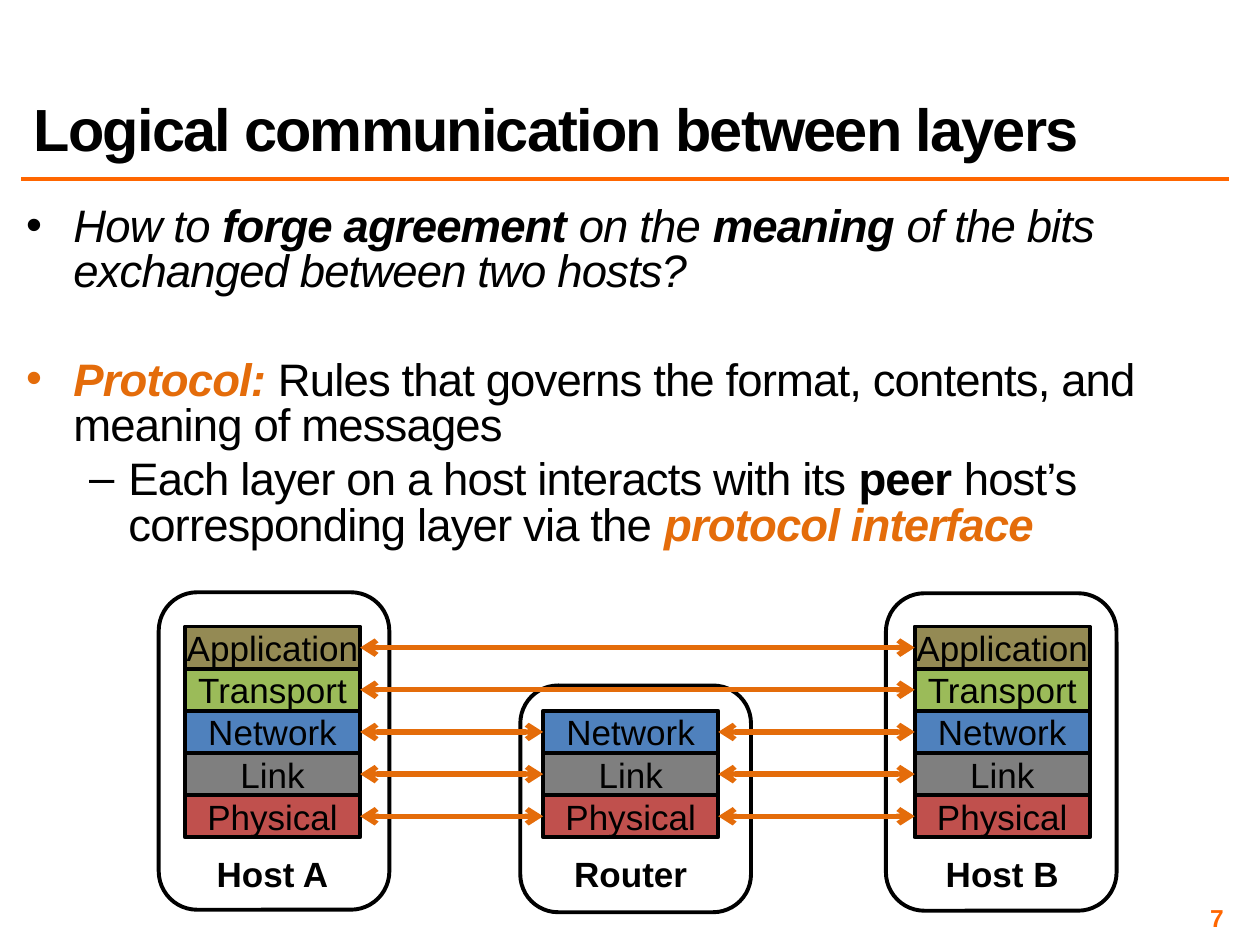
from dataclasses import dataclass

from lxml.etree import SubElement
from pptx import Presentation
from pptx.dml.color import RGBColor
from pptx.enum.shapes import MSO_CONNECTOR as Connector, MSO_SHAPE as Shape
from pptx.enum.text import MSO_ANCHOR as Anchor, PP_ALIGN as Align
from pptx.oxml.ns import qn
from pptx.util import Cm, Pt

COLORS = {
    "black": "000000",
    "rule": "FF6600",
    "accent": "E46C0A",
    "Application": "948A54",
    "Transport": "9BBB59",
    "Network": "4F81BD",
    "Link": "7F7F7F",
    "Physical": "C0504D",
}
LAYERS = ["Application", "Transport", "Network", "Link", "Physical"]
LAYER_TOP, LAYER_WIDTH, LAYER_HEIGHT = 12.63, 3.53, 0.85
FRAME_WIDTH = 4.65
LABEL_TOP, LABEL_WIDTH, LABEL_HEIGHT = 17.07, 2.8, 1.12
LEFT_SIDE, RIGHT_SIDE = 1, 3


@dataclass
class Span:
    text: str
    bold: bool = False
    italic: bool = False
    color: str = "black"


@dataclass
class Bullet:
    mark: str
    margin: float
    hanging: float
    space_before: float
    spans: list[Span]


@dataclass
class Node:
    name: str
    layers: list[str]
    left: float
    frame_left: float
    frame_top: float
    frame_height: float


BULLETS = [
    Bullet("•", 0.95, 0.95, 5.2, [
        Span("How to ", italic=True),
        Span("forge agreement ", bold=True, italic=True),
        Span("on the ", italic=True),
        Span("meaning", bold=True, italic=True),
        Span(" of the bits exchanged between two hosts?", italic=True),
    ]),
    Bullet("•", 0.95, 0.95, 36, [
        Span("Protocol: ", bold=True, italic=True, color="accent"),
        Span("Rules that governs the format, contents, and meaning of messages"),
    ]),
    Bullet("–", 2.06, 0.79, 5.2, [
        Span("Each layer on a host interacts with its "),
        Span("peer", bold=True),
        Span(" host’s corresponding layer via the "),
        Span("protocol interface", bold=True, italic=True, color="accent"),
    ]),
]
HOST_A = Node("Host A", LAYERS, 3.73, 3.2, 11.94, 6.4)
ROUTER = Node("Router", LAYERS[2:], 10.95, 10.49, 13.82, 4.57)
HOST_B = Node("Host B", LAYERS, 18.44, 17.86, 11.96, 6.4)
NODES = [HOST_A, ROUTER, HOST_B]


def rgb(name: str) -> RGBColor:
    return RGBColor.from_string(COLORS[name])


def write(para, spans: list[Span], *, size: float, align=Align.LEFT,
          tracking: float = 0, line_spacing: float = 1) -> None:
    """Fill a paragraph with spans; tracking is letter spacing in points."""
    para.alignment = align
    para.line_spacing = line_spacing
    for span in spans:
        run = para.add_run()
        run.text = span.text
        font = run.font
        font.name, font.size = "Arial", Pt(size)
        font.bold, font.italic = span.bold, span.italic
        font.color.rgb = rgb(span.color)
        if tracking:
            run._r.get_or_add_rPr().set("spc", str(round(tracking * 100)))


def add_text_box(slide, left: float, top: float, width: float, height: float,
                 *, anchor=Anchor.TOP, wrap: bool = True, inset: float | None = None):
    box = slide.shapes.add_textbox(Cm(left), Cm(top), Cm(width), Cm(height))
    frame = box.text_frame
    frame.word_wrap, frame.vertical_anchor = wrap, anchor
    if inset is not None:
        frame.margin_left = frame.margin_right = Cm(inset)
        frame.margin_top = frame.margin_bottom = Cm(inset)
    return frame


def set_bullet(para, bullet: Bullet) -> None:
    para.space_before = Pt(bullet.space_before)
    properties = para._p.get_or_add_pPr()
    properties.set("marL", str(Cm(bullet.margin)))
    properties.set("indent", str(-Cm(bullet.hanging)))
    SubElement(properties, qn("a:buFont"), typeface="Arial")
    SubElement(properties, qn("a:buChar"), char=bullet.mark)


def add_box(slide, kind, left: float, top: float, width: float, height: float,
            fill: str | None = None):
    box = slide.shapes.add_shape(kind, Cm(left), Cm(top), Cm(width), Cm(height))
    box.shadow.inherit = False
    if fill:
        box.fill.solid()
        box.fill.fore_color.rgb = rgb(fill)
    else:
        box.fill.background()
    box.line.color.rgb = rgb("black")
    box.line.width = Pt(2.25)
    return box


def add_layers(slide, node: Node) -> dict:
    """Draw a node's layer stack and return its boxes by layer name."""
    boxes = {}
    for layer in node.layers:
        top = LAYER_TOP + LAYERS.index(layer) * LAYER_HEIGHT
        box = add_box(slide, Shape.RECTANGLE, node.left, top, LAYER_WIDTH, LAYER_HEIGHT, layer)
        frame = box.text_frame
        frame.word_wrap, frame.vertical_anchor = False, Anchor.MIDDLE
        write(frame.paragraphs[0], [Span(layer)], size=20, align=Align.CENTER)
        boxes[layer] = box
    return boxes


def add_label(slide, node: Node) -> None:
    left = node.left + (LAYER_WIDTH - LABEL_WIDTH) / 2
    frame = add_text_box(slide, left, LABEL_TOP, LABEL_WIDTH, LABEL_HEIGHT, wrap=False)
    write(frame.paragraphs[0], [Span(node.name, bold=True)], size=20, align=Align.CENTER)


def add_line(slide, start: tuple, end: tuple, color: str, width: float):
    line = slide.shapes.add_connector(Connector.STRAIGHT, *map(Cm, start + end))
    line.line.color.rgb = rgb(color)
    line.line.width = Pt(width)
    SubElement(line._element.spPr, qn("a:effectLst"))
    return line


def link_peers(slide, source, target) -> None:
    arrow = add_line(slide, (0, 0), (0, 0), "accent", 3)
    arrow.begin_connect(source, RIGHT_SIDE)
    arrow.end_connect(target, LEFT_SIDE)
    outline = arrow.line._get_or_add_ln()
    for end in ("a:headEnd", "a:tailEnd"):
        SubElement(outline, qn(end), type="arrow")


def main() -> None:
    deck = Presentation()
    deck.slide_width, deck.slide_height = Cm(25.4), Cm(19.05)
    slide = deck.slides.add_slide(deck.slide_layouts[6])

    add_line(slide, (0.43, 3.61), (24.77, 3.61), "rule", 2)
    title = add_text_box(slide, 0.43, 0.43, 24.33, 2.97, anchor=Anchor.BOTTOM)
    write(title.paragraphs[0], [Span("Logical communication between layers", bold=True)],
          size=34, tracking=-1, line_spacing=0.8)

    body = add_text_box(slide, 0.43, 4.06, 24.36, 7.09, inset=0.1)
    for index, bullet in enumerate(BULLETS):
        para = body.add_paragraph() if index else body.paragraphs[0]
        write(para, bullet.spans, size=26, tracking=-0.5, line_spacing=0.83)
        set_bullet(para, bullet)

    stacks = [add_layers(slide, node) for node in NODES]
    for node in NODES:
        add_label(slide, node)
    for node in NODES:
        add_box(slide, Shape.ROUNDED_RECTANGLE, node.frame_left, node.frame_top,
                FRAME_WIDTH, node.frame_height)

    for layer in LAYERS:
        peers = [stack[layer] for stack in stacks if layer in stack]
        for source, target in zip(peers, peers[1:]):
            link_peers(slide, source, target)

    number = add_text_box(slide, 18.85, 18.21, 5.92, 0.58, anchor=Anchor.MIDDLE, inset=0.1)
    write(number.paragraphs[0], [Span("7", bold=True, color="rule")], size=14, align=Align.RIGHT)
    deck.save("out.pptx")


if __name__ == "__main__":
    main()
